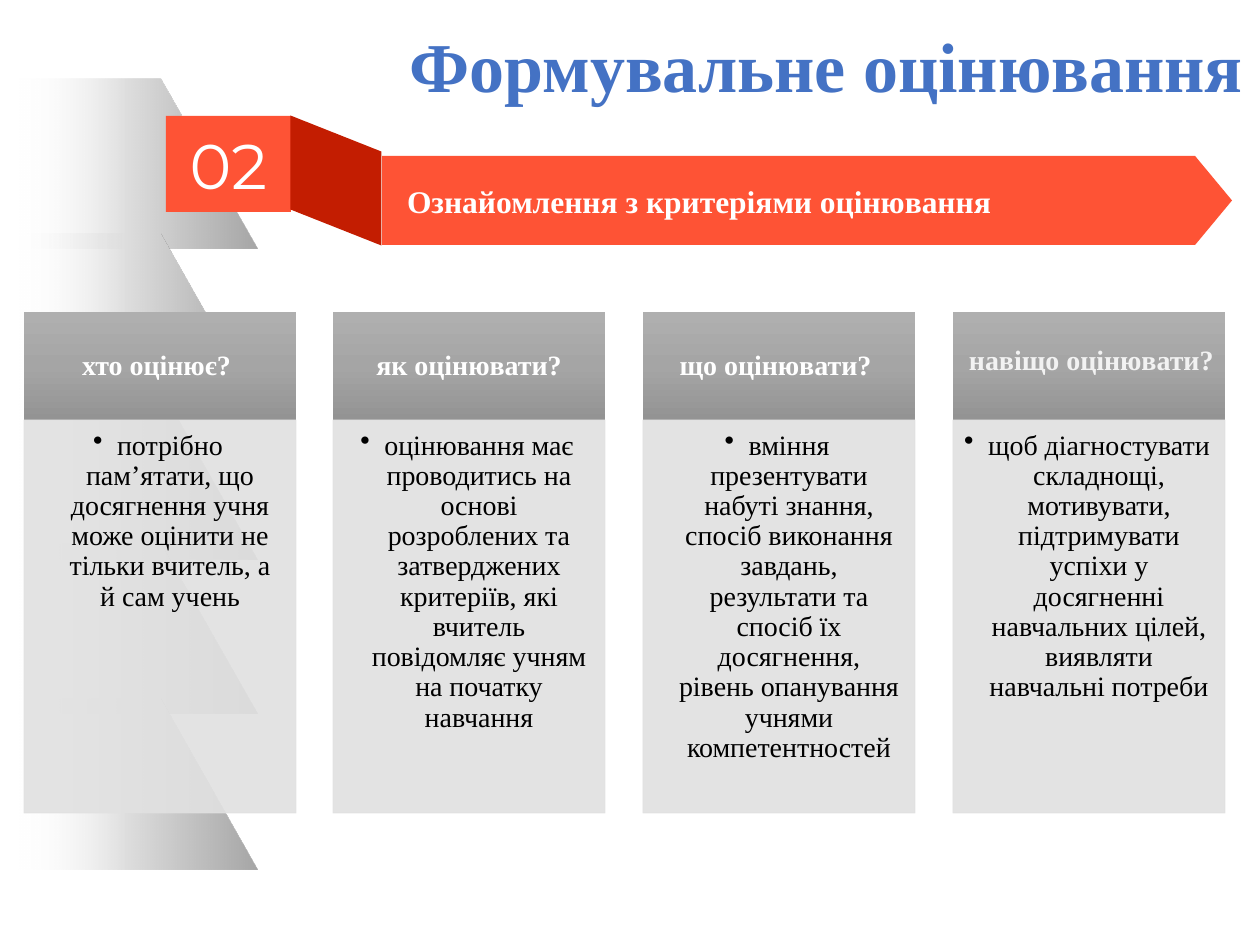
from lxml.etree import SubElement
from pptx import Presentation
from pptx.dml.color import RGBColor
from pptx.enum.shapes import MSO_SHAPE
from pptx.enum.text import MSO_ANCHOR, PP_ALIGN
from pptx.oxml.ns import qn
from pptx.util import Inches, Pt

SCALE = Inches(1) / 126
WHITE = RGBColor(0xFF, 0xFF, 0xFF)
BLACK = RGBColor(0x00, 0x00, 0x00)
BLUE = RGBColor(0x44, 0x72, 0xC4)
ORANGE = RGBColor(0xFE, 0x53, 0x35)
DARK_RED = RGBColor(0xC3, 0x1D, 0x01)
PANEL = RGBColor(0xE1, 0xE1, 0xE1)
PALE = RGBColor(0xF2, 0xF2, 0xF2)
GREY_LIGHT = RGBColor(0xAF, 0xAF, 0xAF)
GREY_MID = RGBColor(0xA5, 0xA5, 0xA5)
GREY_DARK = RGBColor(0x93, 0x93, 0x93)
FOLD_DARK = RGBColor(0xA6, 0xA6, 0xA6)
FOLD_MID = RGBColor(0xDD, 0xDD, 0xDD)

FOLD_STOPS = [(0, FOLD_DARK, 100), (50, FOLD_MID, 100), (93, WHITE, 0), (100, WHITE, 0)]
HEADER_STOPS = [(0, GREY_LIGHT, 100), (50, GREY_MID, 100), (100, GREY_DARK, 100)]

COLUMNS = [
    ("хто оцінює? ",
     "потрібно пам’ятати, що досягнення учня може оцінити не тільки вчитель, а й сам учень"),
    ("як оцінювати?",
     "оцінювання має проводитись на основі розроблених та затверджених критеріїв, "
     "які вчитель повідомляє учням на початку навчання"),
    ("що оцінювати? ",
     "вміння презентувати набуті знання, спосіб виконання завдань, результати та "
     "спосіб їх досягнення, рівень опанування учнями компетентностей"),
    ("",
     "щоб діагностувати складнощі, мотивувати, підтримувати успіхи у досягненні "
     "навчальних цілей, виявляти навчальні потреби"),
]


def px(n):
    return round(n * SCALE)


def set_alpha(color, percent):
    SubElement(color, qn("a:alpha"), val=str(percent * 1000))


def write_text(sp, text, size=16, color=WHITE, bold=False, font="Times New Roman",
               align=PP_ALIGN.CENTER, anchor=MSO_ANCHOR.MIDDLE,
               insets=(13, 6, 13, 6), bullet=False, spacing=None):
    tf = sp.text_frame
    tf.word_wrap = True
    tf.vertical_anchor = anchor
    tf.margin_left, tf.margin_top, tf.margin_right, tf.margin_bottom = map(px, insets)
    p = tf.paragraphs[0]
    p.alignment = align
    if bullet:
        p.level = 1
        pPr = p._p.get_or_add_pPr()
        pPr.set("marL", str(px(24)))
        pPr.set("indent", str(px(-24)))
        SubElement(pPr, qn("a:buChar"), char="•")
    if spacing:
        p.line_spacing = spacing
    r = p.add_run()
    r.text = text
    r.font.name = font
    r.font.size = Pt(size)
    r.font.bold = bold
    r.font.color.rgb = color


class SlideBuilder:
    """Draws the elements of one slide in a shared style."""

    def __init__(self, slide):
        self.s = slide

    def shape(self, kind, x, y, w, h, color=None, adj=None):
        sp = self.s.shapes.add_shape(kind, px(x), px(y), px(w), px(h))
        sp.shadow.inherit = False
        sp.line.fill.background()
        if color is not None:
            sp.fill.solid()
            sp.fill.fore_color.rgb = color
        if adj is not None:
            sp.adjustments[0] = adj
        return sp

    def gradient(self, sp, stops, angle):
        sp.fill.gradient()
        sp.fill.gradient_angle = angle
        gs_list = sp._element.spPr.find(".//" + qn("a:gsLst"))
        for gs in list(gs_list):
            gs_list.remove(gs)
        for pos, color, alpha in stops:
            gs = SubElement(gs_list, qn("a:gs"), pos=str(pos * 1000))
            clr = SubElement(gs, qn("a:srgbClr"), val=str(color))
            if alpha < 100:
                set_alpha(clr, alpha)

    def fold(self, y):
        fb = self.s.shapes.build_freeform(0, y, scale=SCALE)
        fb.add_line_segments([(160, y), (257, y + 170), (0, y + 170)], close=True)
        sp = fb.convert_to_shape()
        sp.shadow.inherit = False
        sp.line.fill.background()
        self.gradient(sp, FOLD_STOPS, 180)

    def header(self, x, text):
        sp = self.shape(MSO_SHAPE.RECTANGLE, x, 312, 272, 108)
        self.gradient(sp, HEADER_STOPS, 270)
        if text:
            write_text(sp, text, bold=True, insets=(15, 9, 15, 9), spacing=0.9)

    def panel(self, x, text):
        sp = self.shape(MSO_SHAPE.RECTANGLE, x, 420, 272, 393, PANEL)
        sp.line.color.rgb = PANEL
        sp.line.width = Pt(0.5)
        for clr in sp._element.spPr.iter(qn("a:srgbClr")):
            set_alpha(clr, 90)
        write_text(sp, text, color=BLACK, anchor=MSO_ANCHOR.TOP,
                   insets=(11, 11, 15, 18), bullet=True, spacing=0.9)

    def label(self, x, y, w, h, text, **fmt):
        sp = self.s.shapes.add_textbox(px(x), px(y), px(w), px(h))
        write_text(sp, text, **fmt)


def main():
    prs = Presentation()
    prs.slide_width, prs.slide_height = Inches(10), Inches(7.5)
    b = SlideBuilder(prs.slides.add_slide(prs.slide_layouts[6]))

    for i in range(5):
        b.fold(79 + 155 * i)

    arrow = b.shape(MSO_SHAPE.PENTAGON, 382, 156, 850, 89, ORANGE, adj=0.415)
    write_text(arrow, "Ознайомлення з критеріями оцінювання", size=18, bold=True,
               align=PP_ALIGN.JUSTIFY, insets=(25, 6, 25, 6))
    number = b.shape(MSO_SHAPE.RECTANGLE, 166, 116, 125, 96, ORANGE)
    write_text(number, "02", size=36, font="Montserrat")
    side = b.shape(MSO_SHAPE.PARALLELOGRAM, 271, 135, 130, 91, DARK_RED, adj=0.396)
    side.rotation = 270

    b.label(122, 15, 1134, 100, "Формувальне оцінювання", size=40, color=BLUE,
            bold=True, align=PP_ALIGN.RIGHT)

    for i, (question, answer) in enumerate(COLUMNS):
        x = 24 + 929 * i // 3
        b.header(x, question)
        b.panel(x, answer)
    b.label(956, 334, 277, 50, "навіщо оцінювати?", color=PALE, bold=True,
            align=PP_ALIGN.LEFT)

    prs.save("out.pptx")


if __name__ == "__main__":
    main()
